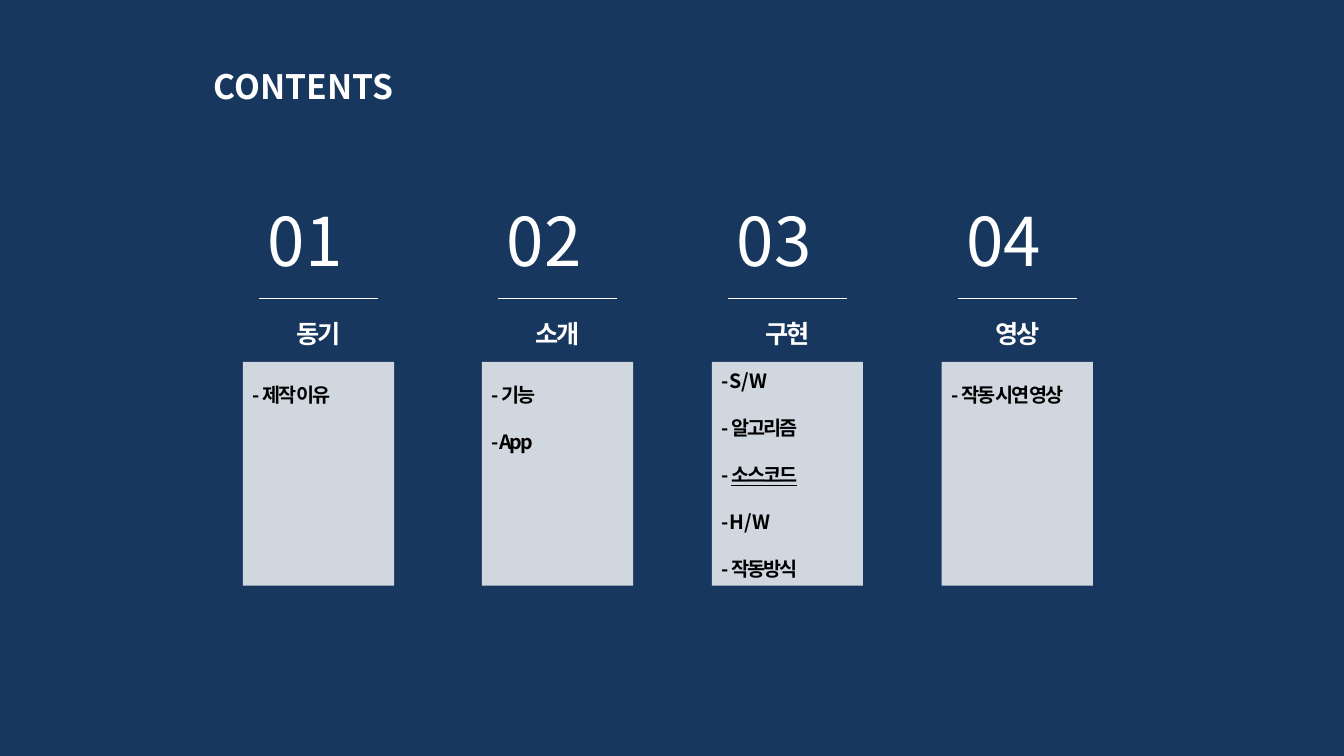
from lxml import etree
from pptx import Presentation
from pptx.dml.color import RGBColor
from pptx.enum.shapes import MSO_CONNECTOR, MSO_SHAPE
from pptx.enum.text import MSO_AUTO_SIZE, PP_ALIGN
from pptx.oxml.ns import qn
from pptx.util import Inches, Pt

RECTANGLE = MSO_SHAPE.RECTANGLE
STRAIGHT = MSO_CONNECTOR.STRAIGHT
GROW = MSO_AUTO_SIZE.SHAPE_TO_FIT_TEXT
LEFT, CENTER, JUSTIFY = PP_ALIGN.LEFT, PP_ALIGN.CENTER, PP_ALIGN.JUSTIFY


def color(hex_value):
    return RGBColor.from_string(hex_value)


class ContentsSlide:
    font = "Noto Sans CJK KR"
    navy, white, black = "17375E", "FFFFFF", "000000"

    def __init__(self, presentation):
        self.slide = presentation.slides.add_slide(presentation.slide_layouts[6])
        background = self.slide.background.fill
        background.solid()
        background.fore_color.rgb = color(self.navy)

    def panel(self, left, top, width, height, opacity):
        panel = self.slide.shapes.add_shape(
            RECTANGLE, Inches(left), Inches(top), Inches(width), Inches(height))
        panel.shadow.inherit = False
        panel.fill.solid()
        panel.fill.fore_color.rgb = color(self.white)
        tint = panel.fill._xPr.find(".//" + qn("a:srgbClr"))
        etree.SubElement(tint, qn("a:alpha"), val=str(opacity * 1000))
        panel.line.fill.background()

    def rule(self, left, top, width):
        rule = self.slide.shapes.add_connector(
            STRAIGHT, Inches(left), Inches(top), Inches(left + width), Inches(top))
        rule.line.color.rgb = color(self.white)
        rule.line.width = Pt(0.75)
        etree.SubElement(rule._element.spPr, qn("a:effectLst"))

    def text(self, left, top, width, height, lines, size, ink=white, bold=True,
             align=LEFT, tracking=0, gap=0, underlined=()):
        box = self.slide.shapes.add_textbox(
            Inches(left), Inches(top), Inches(width), Inches(height))
        frame = box.text_frame
        frame.word_wrap = True
        frame.auto_size = GROW
        for index, line in enumerate(lines):
            paragraph = frame.paragraphs[0] if index == 0 else frame.add_paragraph()
            paragraph.alignment = align
            if index:
                paragraph.space_before = Pt(gap)
            # The dash of an underlined item stays plain
            parts = ["- ", line[2:]] if line in underlined else [line]
            for part in parts:
                run = paragraph.add_run()
                run.text = part
                run.font.size = Pt(size)
                run.font.bold = bold
                run.font.color.rgb = color(ink)
                run.font.name = self.font
                if line in underlined and part != "- ":
                    run.font.underline = True
                properties = run._r.get_or_add_rPr()
                etree.SubElement(properties, qn("a:ea"), typeface=self.font)
                if tracking:
                    properties.set("spc", str(int(tracking * 100)))


COLUMN_WIDTH = 1.5
TRACKING = -1.5
# left, heading, top of the items, height of the items, items
CHAPTERS = [
    (2.41, "동기", 3.75, 0.34, ["- 제작 이유"]),
    (4.78, "소개", 3.75, 0.81, ["- 기능", "- App"]),
    (7.06, "구현", 3.61, 2.22,
     ["- S / W", "- 알고리즘", "- 소스코드", "- H / W", "- 작동방식"]),
    (9.34, "영상", 3.75, 0.34, ["- 작동 시연 영상"]),
]


def main():
    presentation = Presentation()
    presentation.slide_width = Inches(13.33)
    presentation.slide_height = Inches(7.5)
    contents = ContentsSlide(presentation)

    # Title
    contents.text(2.02, 0.6, 4.57, 0.5, ["CONTENTS"], 24)

    # One column per chapter: number, rule, heading, panel with items
    for number, (left, heading, items_top, items_height, items) in enumerate(CHAPTERS, 1):
        contents.panel(left, 3.59, COLUMN_WIDTH, 2.22, opacity=80)
        contents.text(left, 1.93, COLUMN_WIDTH, 0.91, [f" {number:02} "], 48,
                      bold=False, align=JUSTIFY)
        contents.rule(left + 0.16, 2.96, 1.18)
        contents.text(left, 3.11, COLUMN_WIDTH, 0.4, [heading], 18,
                      align=CENTER, tracking=TRACKING)
        contents.text(left, items_top, COLUMN_WIDTH, items_height, items, 14,
                      ink=contents.black, tracking=TRACKING, gap=16.8,
                      underlined=("- 소스코드",))

    presentation.save("out.pptx")


if __name__ == "__main__":
    main()
